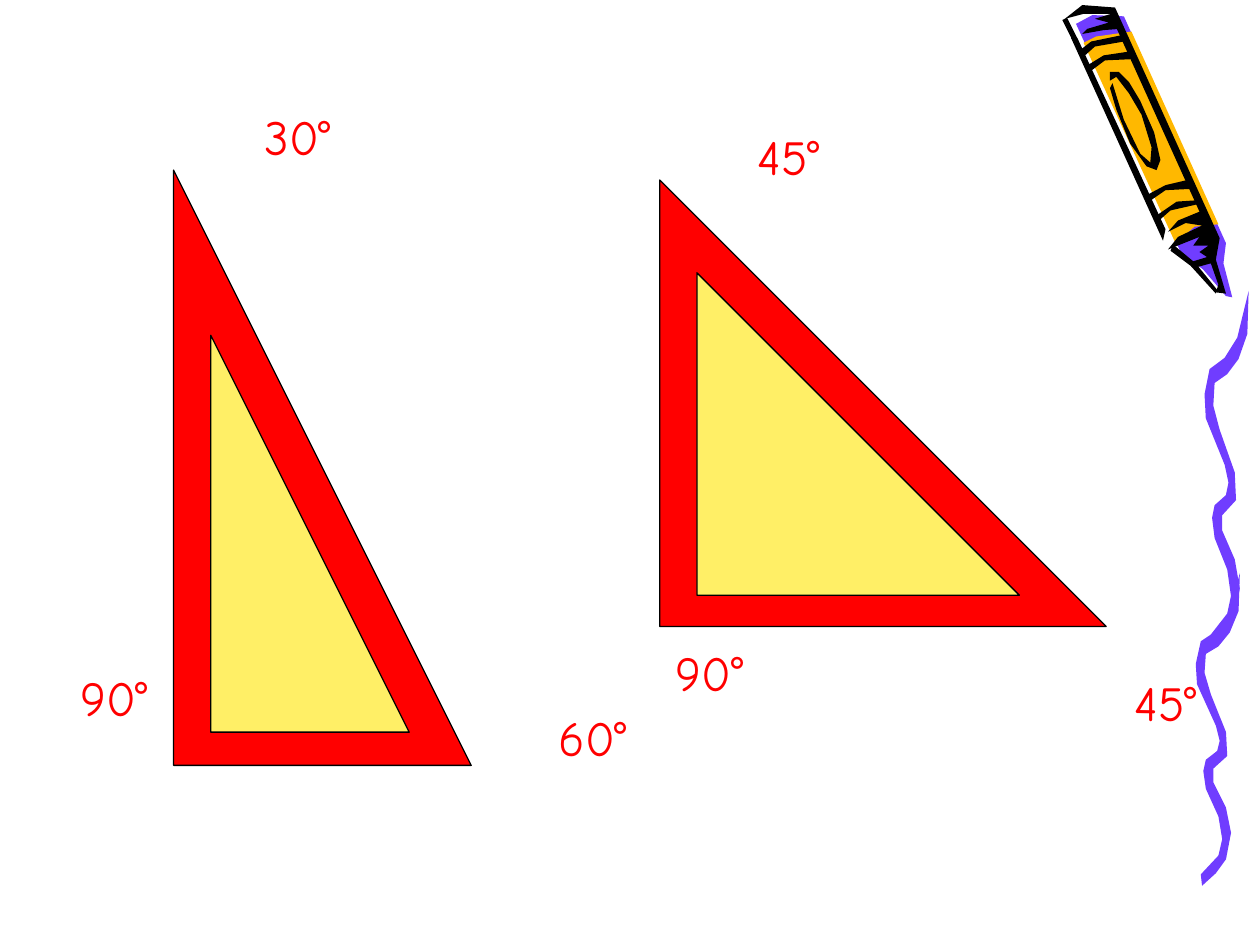
from dataclasses import dataclass

from lxml import etree
from pptx import Presentation
from pptx.dml.color import RGBColor
from pptx.enum.shapes import MSO_CONNECTOR, MSO_SHAPE
from pptx.enum.text import MSO_AUTO_SIZE, PP_ALIGN
from pptx.oxml.ns import qn
from pptx.util import Cm, Pt

TRIANGLE = MSO_SHAPE.RIGHT_TRIANGLE
STRAIGHT = MSO_CONNECTOR.STRAIGHT
CENTER = PP_ALIGN.CENTER
GROW = MSO_AUTO_SIZE.SHAPE_TO_FIT_TEXT
UNIT = Cm(0.0254)  # grid of the crayon drawing: 1/100 inch


@dataclass(frozen=True)
class Theme:
    red: RGBColor = RGBColor(0xFF, 0x00, 0x00)
    yellow: RGBColor = RGBColor(0xFF, 0xEF, 0x66)
    violet: RGBColor = RGBColor(0x70, 0x3D, 0xFF)
    orange: RGBColor = RGBColor(0xFF, 0xB8, 0x00)
    black: RGBColor = RGBColor(0x00, 0x00, 0x00)
    font: str = "Comic Neue"
    label_size: int = 28
    outline: float = 0.75
    stroke: float = 3


# Crayon outlines, in grid units
CRAYON_TIPS = [
    (854, 19), (937, 200), (955, 214), (973, 235), (978, 236), (971, 209),
    (973, 193), (892, 13), (867, 12)]
CRAYON_BODY = [
    (933, 193), (948, 180), (967, 178), (898, 25), (870, 29), (860, 34)]
CRAYON_INK = [
    # lower edge of the point
    [(929, 199), (945, 211), (965, 233), (966, 230), (949, 209), (931, 194)],
    # shading of the flat end
    [(859, 27), (876, 24), (889, 23), (882, 11), (869, 15), (880, 18),
     (863, 23)],
    # oval on the wrapper
    [(881, 70), (886, 87), (897, 114), (910, 132), (918, 135), (921, 127),
     (916, 105), (905, 80), (896, 65), (888, 57), (881, 57), (881, 64),
     (886, 61), (896, 74), (906, 91), (914, 117), (913, 129), (905, 122),
     (892, 95), (883, 66)],
    # left edge
    [(850, 30), (923, 191), (925, 182), (855, 30)],
    # right edge and point
    [(927, 198), (935, 188), (954, 179), (941, 177), (927, 184), (935, 175),
     (952, 168), (881, 11), (860, 11), (845, 15), (859, 4), (885, 6),
     (968, 189), (965, 206), (973, 233), (965, 232), (967, 226), (961, 209),
     (950, 212), (945, 208), (958, 204), (952, 200), (959, 195), (947, 195),
     (952, 188)],
    # wrapper bands, from the point up
    [(921, 174), (929, 167), (951, 162), (949, 159), (934, 160), (918, 171)],
    [(912, 160), (925, 151), (945, 150), (942, 143), (925, 147), (910, 155)],
    [(865, 57), (877, 48), (899, 47), (896, 41), (876, 44), (863, 52)],
    [(860, 45), (869, 37), (892, 33), (890, 28), (866, 33), (857, 40)],
]
# Wavy trail, measured from its top left corner
WAVE = [
    (4, 274), (18, 256), (21, 242), (18, 221), (8, 196), (6, 180), (8, 170),
    (17, 162), (19, 152), (16, 138), (1, 101), (0, 82), (4, 62), (16, 53),
    (26, 37), (35, 0), (34, 34), (27, 54), (18, 66), (8, 73), (7, 91),
    (12, 110), (24, 144), (25, 166), (14, 178), (14, 190), (24, 213),
    (28, 236), (24, 260), (16, 273), (5, 284)]
WAVE_PLACES = [(949, 455, 248 / 284), (956, 231, 1)]  # left, top, stretch

# Outer and inner triangle of each set square: left, top, width, height in cm
SET_SQUARES = [
    ((3.5, 3.43, 6, 12), (4.25, 6.76, 4, 8)),
    ((13.3, 3.63, 9, 9), (14.05, 5.5, 6.5, 6.5)),
]
# Angle, left, top, width in cm
ANGLES = [
    ("90°", 0.6, 13.34, 3.4),
    ("60°", 10.2, 14.13, 3.5),
    ("30°", 4.1, 2.03, 3.8),
    ("45°", 14, 2.42, 3.8),
    ("45°", 21.6, 13.43, 3.8),
    ("90°", 12.6, 12.83, 3.4),
]


def write(p, text, *, font, size, color, align=CENTER):
    p.alignment = align
    r = p.add_run()
    r.text = text
    r.font.name = font
    r.font.size = Pt(size)
    r.font.color.rgb = color


class Painter:
    """Holds the theme and the slide being drawn."""

    def __init__(self, s, theme):
        self.s = s
        self.theme = theme

    def outline(self, points, color):
        """Fill a closed outline given in grid units."""
        builder = self.s.shapes.build_freeform(*points[0], scale=UNIT)
        builder.add_line_segments(points[1:], close=True)
        sp = builder.convert_to_shape()
        sp.shadow.inherit = False
        sp.fill.solid()
        sp.fill.fore_color.rgb = color
        sp.line.fill.background()

    def line(self, start, end):
        ends = [UNIT * v for v in (*start, *end)]
        sp = self.s.shapes.add_connector(STRAIGHT, *ends)
        sp.line.color.rgb = self.theme.black
        sp.line.width = Pt(self.theme.stroke)
        etree.SubElement(sp._element.spPr, qn("a:effectLst"))

    def set_square(self, boxes):
        group = self.s.shapes.add_group_shape()
        for box, color in zip(boxes, (self.theme.red, self.theme.yellow)):
            sp = group.shapes.add_shape(TRIANGLE, *map(Cm, box))
            sp.shadow.inherit = False
            sp.fill.solid()
            sp.fill.fore_color.rgb = color
            sp.line.color.rgb = self.theme.black
            sp.line.width = Pt(self.theme.outline)

    def label(self, text, left, top, width):
        sp = self.s.shapes.add_textbox(Cm(left), Cm(top), Cm(width), Cm(1.45))
        tf = sp.text_frame
        tf.word_wrap = True
        tf.auto_size = GROW
        write(tf.paragraphs[0], text, font=self.theme.font,
              size=self.theme.label_size, color=self.theme.red)

    def crayon(self):
        self.outline(CRAYON_TIPS, self.theme.violet)
        self.outline(CRAYON_BODY, self.theme.orange)
        for left, top, stretch in WAVE_PLACES:
            self.outline([(left + x, top + y * stretch) for x, y in WAVE],
                         self.theme.violet)
        for points in CRAYON_INK:
            self.outline(points, self.theme.black)
        self.line((845, 15), (853, 31))


def main():
    prs = Presentation()
    prs.slide_width, prs.slide_height = Cm(25.4), Cm(19.05)
    painter = Painter(prs.slides.add_slide(prs.slide_layouts[6]), Theme())
    painter.crayon()
    for boxes in SET_SQUARES:
        painter.set_square(boxes)
    for angle in ANGLES:
        painter.label(*angle)
    prs.save("out.pptx")


if __name__ == "__main__":
    main()
